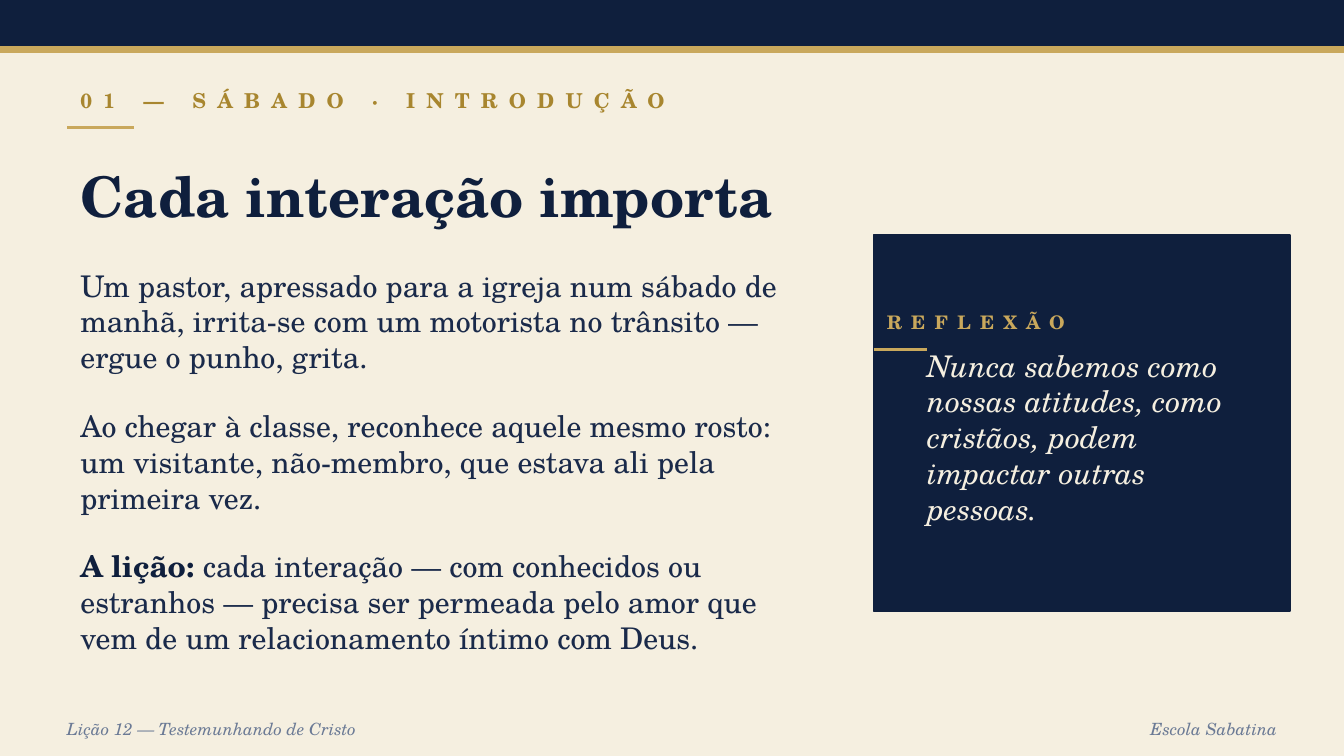
import pptx
import pptx.util
import pptx.dml.color
import pptx.enum.shapes
import pptx.enum.text
import pptx.oxml.ns
import lxml.etree

Inches = pptx.util.Inches
Pt = pptx.util.Pt
RGBColor = pptx.dml.color.RGBColor
ALIGN = pptx.enum.text.PP_ALIGN
ANCHOR = pptx.enum.text.MSO_ANCHOR

NAVY = RGBColor(0x0F, 0x1F, 0x3D)
INK = RGBColor(0x1A, 0x2A, 0x4A)
GOLD = RGBColor(0xC9, 0xA8, 0x5C)
DARK_GOLD = RGBColor(0xA8, 0x86, 0x2F)
GREY = RGBColor(0x6B, 0x7A, 0x95)
CREAM = RGBColor(0xF5, 0xEF, 0xE0)
FONT = "TeX Gyre Schola"

BODY = [
    [("Um pastor, apressado para a igreja num sábado de manhã, irrita-se com um "
      "motorista no trânsito — ergue o punho, grita.", False)],
    [("Ao chegar à classe, reconhece aquele mesmo rosto: um visitante, não-membro, "
      "que estava ali pela primeira vez.", False)],
    [("A lição: ", True),
     ("cada interação — com conhecidos ou estranhos — precisa ser permeada pelo amor "
      "que vem de um relacionamento íntimo com Deus.", False)],
]


def style_run(run, size, color, bold=False, italic=False, spacing=0):
    run.font.name = FONT
    run.font.size = Pt(size)
    run.font.color.rgb = color
    run.font.bold = bold
    run.font.italic = italic
    if spacing:
        run._r.get_or_add_rPr().set("spc", str(spacing * 100))


def add_frame(slide, left, top, width, height, anchor=ANCHOR.MIDDLE):
    box = slide.shapes.add_textbox(Inches(left), Inches(top), Inches(width), Inches(height))
    box.text_frame.word_wrap = True
    box.text_frame.vertical_anchor = anchor
    return box.text_frame


def add_label(slide, left, top, width, height, text, align=ALIGN.LEFT, **style):
    paragraph = add_frame(slide, left, top, width, height).paragraphs[0]
    paragraph.text = text
    paragraph.alignment = align
    style_run(paragraph.runs[0], **style)


def add_block(slide, left, top, width, height, color):
    shape = slide.shapes.add_shape(
        pptx.enum.shapes.MSO_SHAPE.RECTANGLE,
        Inches(left), Inches(top), Inches(width), Inches(height))
    shape.shadow.inherit = False
    shape.fill.solid()
    shape.fill.fore_color.rgb = color
    shape.line.color.rgb = color
    shape.line.width = Pt(1)


def add_rule(slide, left, top, length, weight):
    rule = slide.shapes.add_connector(
        pptx.enum.shapes.MSO_CONNECTOR.STRAIGHT,
        Inches(left), Inches(top), Inches(left + length), Inches(top))
    rule.line.color.rgb = GOLD
    rule.line.width = Pt(weight)
    lxml.etree.SubElement(rule._element.spPr, pptx.oxml.ns.qn("a:effectLst"))


def add_banner(slide, left, top, width):
    add_block(slide, left, top, width, 0.35, NAVY)
    add_block(slide, left, top + 0.35, width, 0.04, GOLD)


def add_footer(slide, left, top, width):
    add_label(slide, left, top, 6, 0.25, "Lição 12 — Testemunhando de Cristo",
              size=9, color=GREY, italic=True)
    add_label(slide, left + width - 2, top, 2, 0.25, "Escola Sabatina", ALIGN.RIGHT,
              size=9, color=GREY, italic=True)


def add_heading(slide, left, top, width):
    add_label(slide, left, top, width, 0.3, "01 — SÁBADO · INTRODUÇÃO",
              size=11, color=DARK_GOLD, bold=True, spacing=6)
    add_rule(slide, left, top + 0.35, 0.5, 1.5)
    add_label(slide, left, top + 0.45, width, 0.8, "Cada interação importa",
              size=30, color=NAVY, bold=True)


def add_body(slide, left, top, width, height):
    frame = add_frame(slide, left, top, width, height, ANCHOR.TOP)
    for index, parts in enumerate(BODY):
        paragraph = frame.add_paragraph() if index else frame.paragraphs[0]
        paragraph.space_before = Pt(17.6 if index else 0)
        for text, bold in parts:
            run = paragraph.add_run()
            run.text = text
            style_run(run, 16, NAVY if bold else INK, bold)


def add_reflection(slide, left, top, width, height):
    add_block(slide, left, top, width, height, NAVY)
    add_label(slide, left, top + 0.5, width - 0.4, 0.3, "REFLEXÃO",
              size=10, color=GOLD, bold=True, spacing=5)
    add_rule(slide, left, top + 0.85, 0.4, 1.2)
    add_label(slide, left + 0.3, top + 0.5, width - 0.4, height - 0.8,
              "Nunca sabemos como nossas atitudes, como cristãos, podem impactar "
              "outras pessoas.", size=16, color=CREAM, italic=True)


def main():
    presentation = pptx.Presentation()
    presentation.slide_width = Inches(10)
    presentation.slide_height = presentation.slide_width * 9 // 16
    slide = presentation.slides.add_slide(presentation.slide_layouts[6])
    slide.background.fill.solid()
    slide.background.fill.fore_color.rgb = CREAM
    add_banner(slide, 0, 0, 10)
    add_footer(slide, 0.4, 5.3, 9.2)
    add_heading(slide, 0.5, 0.6, 9)
    add_body(slide, 0.5, 1.94, 5.52, 2.8)
    add_reflection(slide, 6.5, 1.75, 3.1, 2.8)
    presentation.save("out.pptx")


if __name__ == "__main__":
    main()
